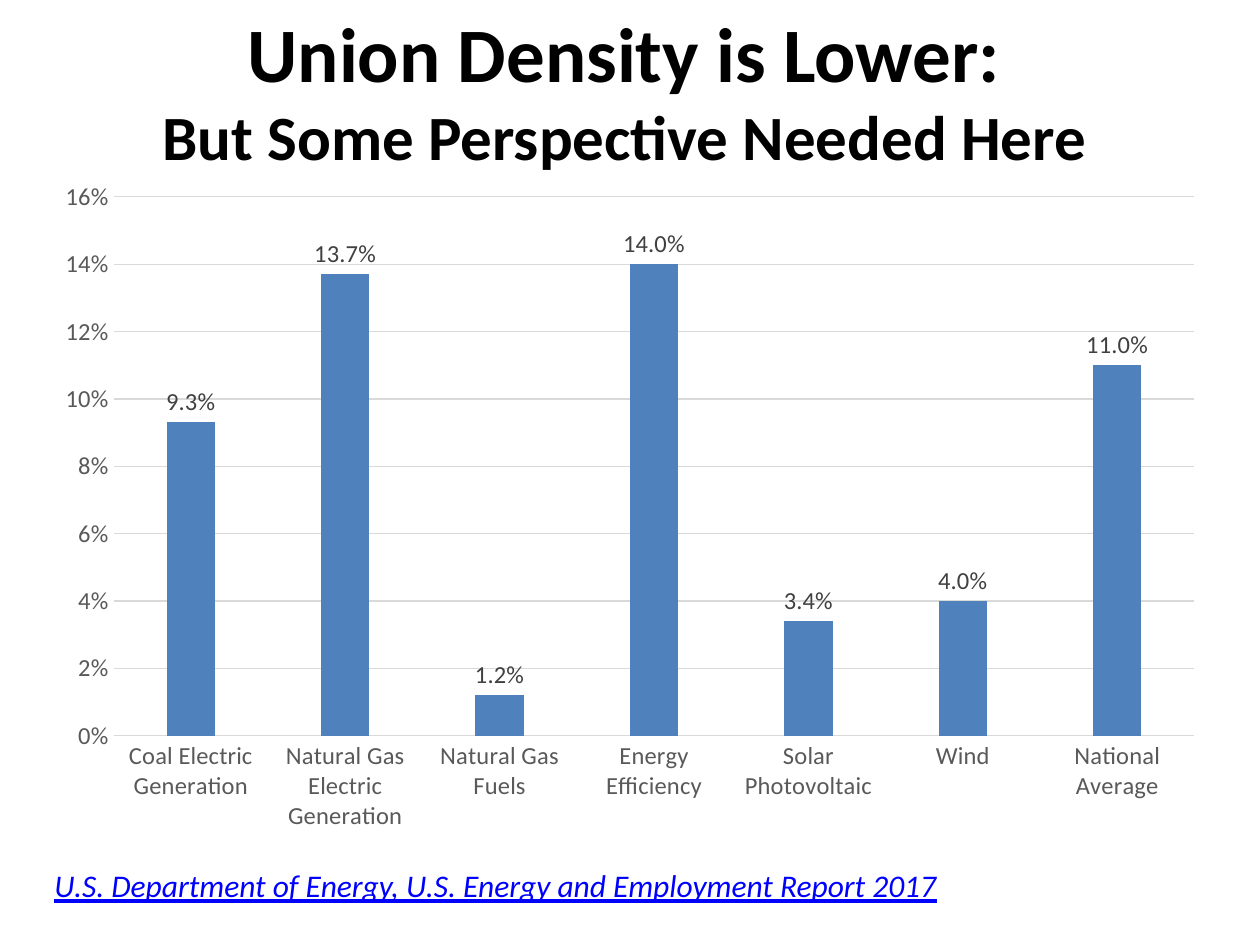
import pptx
import pptx.chart.data
import pptx.dml.color
import pptx.enum.chart
import pptx.enum.text
import pptx.util

WIDTH, HEIGHT = 10, 7.5
FONT = "Calibri"
TITLE_LINES = [("Union Density is Lower:", 44), ("But Some Perspective Needed Here", 36)]
SOURCE = "U.S. Department of Energy, U.S. Energy and Employment Report 2017"
UNION_DENSITY = {
    "Coal Electric Generation": 0.093,
    "Natural Gas Electric Generation": 0.137,
    "Natural Gas Fuels": 0.012,
    "Energy Efficiency": 0.14,
    "Solar Photovoltaic": 0.034,
    "Wind": 0.04,
    "National Average": 0.11,
}


def color(value):
    """Turn a hex string into a colour."""
    return pptx.dml.color.RGBColor.from_string(value)


def set_font(font, size, value, bold=False, italic=False, underline=False):
    """Give a font its face, size, colour and emphasis."""
    font.name, font.size = FONT, pptx.util.Pt(size)
    font.bold, font.italic, font.underline = bold, italic, underline
    font.color.rgb = color(value)


def set_line(line, value):
    """Give a chart line its colour and hairline width."""
    line.color.rgb = color(value)
    line.width = pptx.util.Pt(0.75)


def add_text_frame(slide, box):
    """Add a wrapping text box and return its text frame."""
    frame = slide.shapes.add_textbox(*map(pptx.util.Inches, box)).text_frame
    frame.word_wrap = True
    return frame


def add_title(slide, box):
    """Place the centred two-line heading."""
    frame = add_text_frame(slide, box)
    frame.vertical_anchor = pptx.enum.text.MSO_ANCHOR.MIDDLE
    for index, (text, size) in enumerate(TITLE_LINES):
        paragraph = frame.add_paragraph() if index else frame.paragraphs[0]
        paragraph.text = text
        paragraph.alignment = pptx.enum.text.PP_ALIGN.CENTER
        set_font(paragraph.font, size, "000000", bold=True)


def style_axes(chart):
    """Format the category and percentage axes."""
    for axis in (chart.category_axis, chart.value_axis):
        axis.major_tick_mark = pptx.enum.chart.XL_TICK_MARK.NONE
        axis.minor_tick_mark = pptx.enum.chart.XL_TICK_MARK.NONE
        set_font(axis.tick_labels.font, 14, "595959")
    set_line(chart.category_axis.format.line, "D9D9D9")
    values = chart.value_axis
    values.minimum_scale, values.maximum_scale, values.major_unit = 0, 0.16, 0.02
    values.tick_labels.number_format = "0%"
    values.tick_labels.number_format_is_linked = False
    values.format.line.fill.background()
    set_line(values.major_gridlines.format.line, "D9D9D9")


def add_density_chart(slide, box):
    """Place the column chart of union density by sector."""
    data = pptx.chart.data.CategoryChartData(number_format="0.0%")
    data.categories = list(UNION_DENSITY)
    data.add_series("Series 1", list(UNION_DENSITY.values()))
    kind = pptx.enum.chart.XL_CHART_TYPE.COLUMN_CLUSTERED
    chart = slide.shapes.add_chart(kind, *map(pptx.util.Inches, box), data).chart
    set_font(chart.font, 10, "000000")
    chart.has_legend = chart.has_title = False
    style_axes(chart)
    plot = chart.plots[0]
    plot.gap_width, plot.overlap, plot.vary_by_categories = 219, -27, False
    series = plot.series[0]
    series.format.fill.solid()
    series.format.fill.fore_color.rgb = color("4F81BD")
    labels = series.data_labels
    labels.show_value = True
    labels.position = pptx.enum.chart.XL_LABEL_POSITION.OUTSIDE_END
    labels.number_format, labels.number_format_is_linked = "0.0%", False
    set_font(labels.font, 14, "404040")


def add_source(slide, box):
    """Place the underlined source line."""
    paragraph = add_text_frame(slide, box).paragraphs[0]
    paragraph.text = SOURCE
    set_font(paragraph.font, 18, "0000FF", italic=True, underline=True)


def main():
    """Build and save the slide."""
    presentation = pptx.Presentation()
    presentation.slide_width = pptx.util.Inches(WIDTH)
    presentation.slide_height = pptx.util.Inches(HEIGHT)
    slide = presentation.slides.add_slide(presentation.slide_layouts[6])
    margin, title_bottom = WIDTH / 30, HEIGHT * 0.178
    add_title(slide, (margin / 2, HEIGHT / 90, WIDTH * 0.958, HEIGHT / 6))
    add_density_chart(slide, (margin, title_bottom, WIDTH - 2 * margin, HEIGHT * 0.716))
    add_source(slide, (margin, HEIGHT * 0.91, WIDTH * 0.942, HEIGHT * 0.054))
    presentation.save("out.pptx")


if __name__ == "__main__":
    main()
